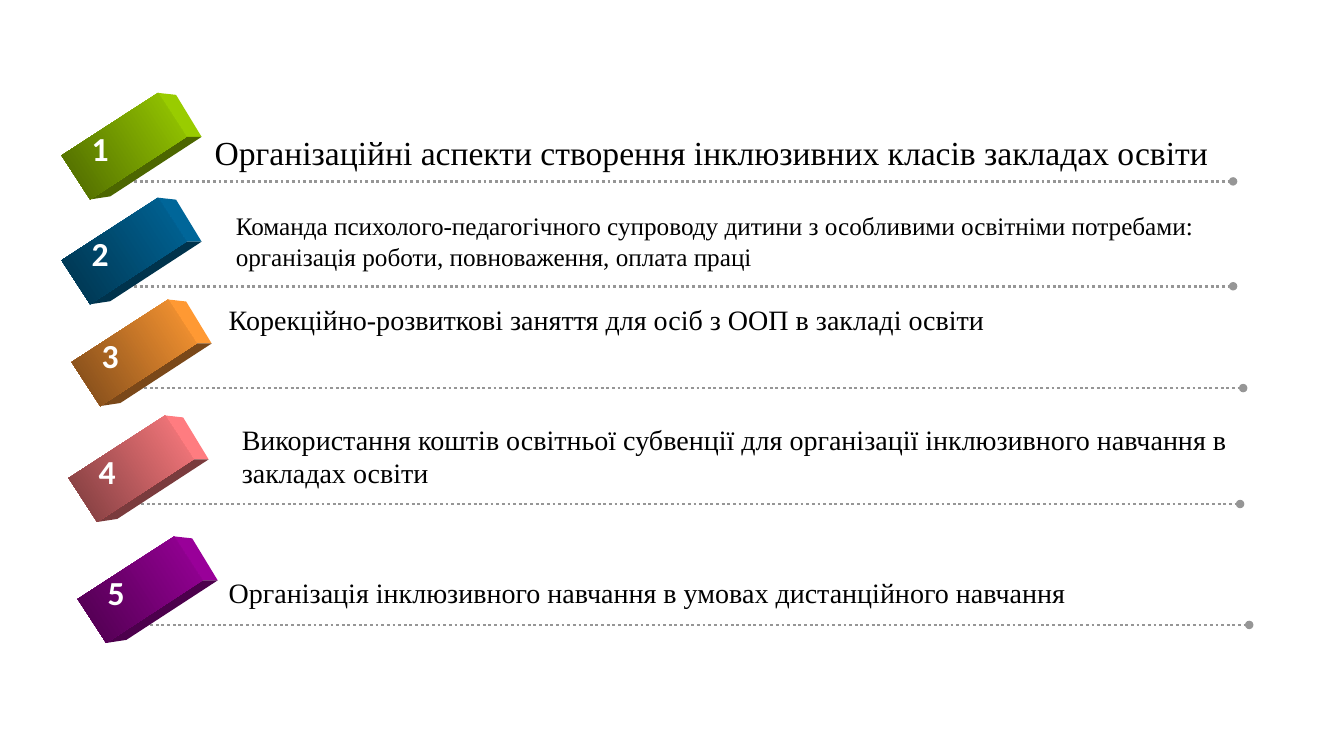
from math import cos, radians, sin

from lxml import etree
from pptx import Presentation
from pptx.dml.color import RGBColor
from pptx.enum.dml import MSO_LINE_DASH_STYLE as Dash
from pptx.enum.shapes import MSO_CONNECTOR, MSO_SHAPE
from pptx.enum.text import MSO_AUTO_SIZE
from pptx.oxml.ns import qn
from pptx.util import Inches, Pt

COLORS = {
    "green": "99CC00", "green_dark": "4C6600",
    "blue": "006699", "blue_dark": "00334C",
    "orange": "FF9933", "orange_dark": "7A4819",
    "pink": "FF7C80", "pink_dark": "7A3B3D",
    "purple": "990099", "purple_dark": "4C004C",
    "line": "969696", "text": "000000", "number": "FFFFFF",
}
ROWS = [
    ("green", 0.96, 0.86, (2.03, 1.26, 10.21, 0.51), 24,
     "Організаційні аспекти створення інклюзивних класів закладах освіти"),
    ("blue", 0.96, 1.9, (2.24, 2.04, 10.06, 0.71), 18,
     "Команда психолого-педагогічного супроводу дитини з особливими освітніми "
     "потребами: організація роботи, повноваження, оплата праці"),
    ("orange", 1.06, 2.91, (2.17, 2.95, 10.06, 0.44), 20,
     "Корекційно-розвиткові заняття для осіб з ООП в закладі освіти"),
    ("pink", 1.03, 4.06, (2.3, 4.14, 10.04, 0.77), 20,
     "Використання коштів освітньої субвенції для організації інклюзивного "
     "навчання в закладах освіти"),
    ("purple", 1.12, 5.26, (2.17, 5.66, 10.21, 0.44), 20,
     "Організація інклюзивного навчання в умовах дистанційного навчання"),
]
BLOCK_WIDTH, BLOCK_HEIGHT, BLOCK_ANGLE = 0.52, 1.14, 57


def rgb(name):
    return RGBColor.from_string(COLORS[name])


def add_text(slide, box, text, font_name, size, color, bold, wrap):
    shape = slide.shapes.add_textbox(*map(Inches, box))
    frame = shape.text_frame
    frame.word_wrap = wrap
    frame.auto_size = MSO_AUTO_SIZE.SHAPE_TO_FIT_TEXT
    run = frame.paragraphs[0].add_run()
    run.text = text
    run.font.name = font_name
    run.font.size = Pt(size)
    run.font.bold = bold
    run.font.color.rgb = rgb(color)


presentation = Presentation()
presentation.slide_width = Inches(13.33)
presentation.slide_height = Inches(7.5)
slide = presentation.slides.add_slide(presentation.slide_layouts[6])

angle = radians(BLOCK_ANGLE)
long_x, long_y = BLOCK_HEIGHT / 2 * sin(angle), -BLOCK_HEIGHT / 2 * cos(angle)
short_x, short_y = BLOCK_WIDTH / 2 * cos(angle), BLOCK_WIDTH / 2 * sin(angle)

for number, (color, left, top, text_box, size, text) in enumerate(ROWS, 1):
    line_y = Inches(top + 0.94)
    line = slide.shapes.add_connector(
        MSO_CONNECTOR.STRAIGHT, Inches(left + 0.37), line_y, Inches(left + 11.27), line_y)
    line.line.color.rgb = rgb("line")
    line.line.width = Pt(2)
    line.line.dash_style = Dash.ROUND_DOT
    etree.SubElement(line.line._get_or_add_ln(), qn("a:tailEnd"), type="oval")
    etree.SubElement(line._element.spPr, qn("a:effectLst"))

    center_x, center_y = left + 0.27, top + 0.59
    upper = (center_x + long_x - short_x, center_y + long_y - short_y)
    right = (center_x + long_x + short_x, center_y + long_y + short_y)
    lower = (center_x - long_x + short_x, center_y - long_y + short_y)
    back_upper = (upper[0] + 0.18, upper[1] + 0.02)
    back_right = (right[0] + 0.15, right[1])
    back_lower = (lower[0] + 0.2, lower[1] - 0.03)
    for face_color, corners in (
        (color, (upper, back_upper, back_right, right)),
        (color + "_dark", (lower, right, back_right, back_lower)),
    ):
        points = [(Inches(x), Inches(y)) for x, y in corners]
        builder = slide.shapes.build_freeform(*points[0])
        builder.add_line_segments(points[1:], close=True)
        face = builder.convert_to_shape()
        face.shadow.inherit = False
        face.fill.solid()
        face.fill.fore_color.rgb = rgb(face_color)
        face.line.fill.background()

    block = slide.shapes.add_shape(
        MSO_SHAPE.RECTANGLE,
        Inches(center_x - BLOCK_WIDTH / 2), Inches(center_y - BLOCK_HEIGHT / 2),
        Inches(BLOCK_WIDTH), Inches(BLOCK_HEIGHT))
    block.rotation = BLOCK_ANGLE
    block.shadow.inherit = False
    block.line.fill.background()
    block.fill.gradient()
    block.fill.gradient_angle = 270
    for stop, stop_color in zip(block.fill.gradient_stops, (color, color + "_dark")):
        stop.color.rgb = rgb(stop_color)

    add_text(slide, text_box, text, "Times New Roman", size, "text", False, True)
    add_text(slide, (left - 0.15, top + 0.36, 0.8, 0.5), str(number),
             "Calibri", 24, "number", True, False)

presentation.save("out.pptx")
